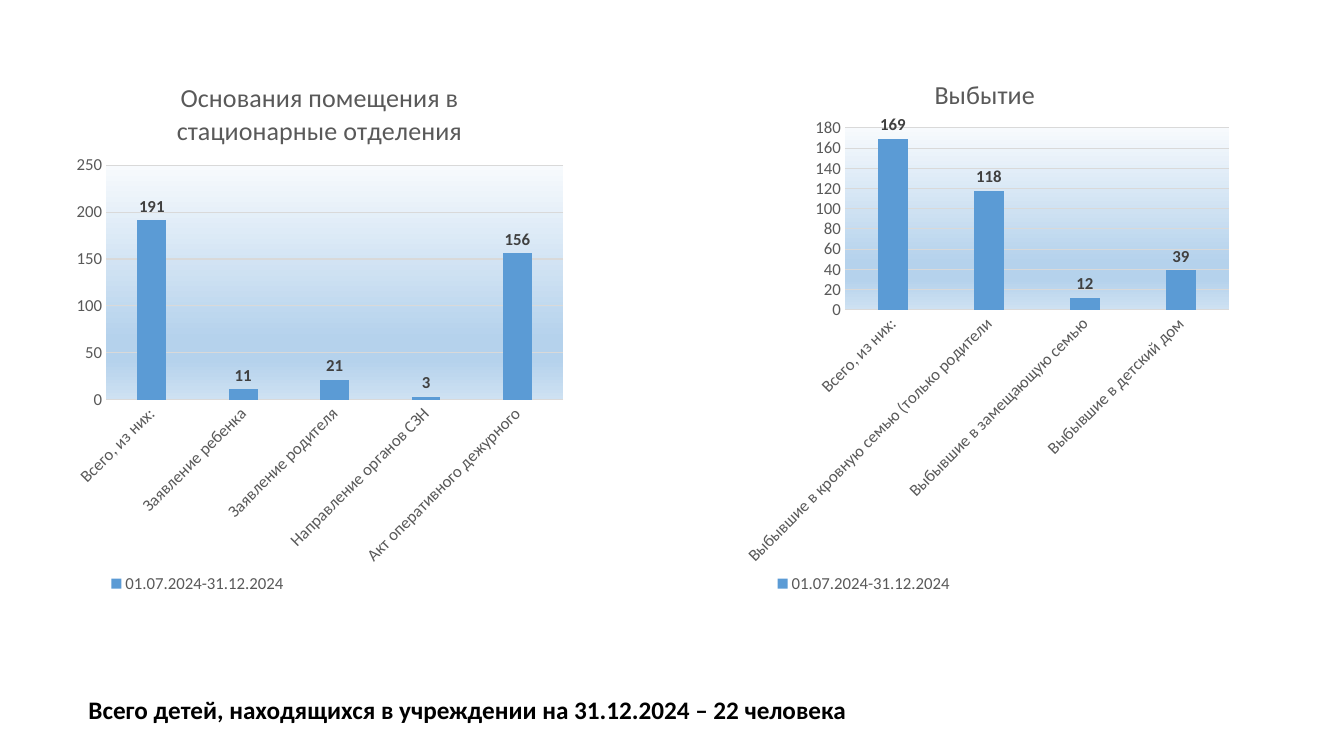
import pptx
import pptx.chart.data
import pptx.dml.color
import pptx.enum.chart
import pptx.enum.text
import pptx.oxml
import pptx.oxml.ns
import pptx.util
from pptx.util import Cm

PERIOD = "01.07.2024-31.12.2024"
SUMMARY = "Всего детей, находящихся в учреждении на 31.12.2024 – 22 человека"
CHARTS = [
    {
        "title": "Основания помещения в стационарные отделения",
        "left": 1.65,
        "values": {
            "Всего, из них:": 191,
            "Заявление ребенка": 11,
            "Заявление родителя": 21,
            "Направление органов СЗН": 3,
            "Акт оперативного дежурного": 156,
        },
        "maximum": 250,
        "step": 50,
        "plot_box": (0.08, 0.21, 0.9, 0.415),
        "title_place": (0.21, 0.05),
    },
    {
        "title": "Выбытие",
        "left": 18.44,
        "values": {
            "Всего, из них:": 169,
            "Выбывшие в кровную семью (только родители": 118,
            "Выбывшие в замещающую семью": 12,
            "Выбывшие в детский дом": 39,
        },
        "maximum": 180,
        "step": 20,
        "plot_box": (0.223, 0.144, 0.756, 0.322),
        "title_place": (0.39, 0.045),
    },
]
LEGEND_BOX = (0.08, 0.93, 0.36, 0.04)
CHART_TOP, CHART_WIDTH, CHART_HEIGHT = 1.17, 12.8, 14.25
THEME = {
    "font": "Calibri",
    "bar": "5B9BD5",
    "axis": "D9D9D9",
    "text": "595959",
    "label": "404040",
    "summary": "000000",
    "plot_stops": [(0, "F7FAFD"), (74, "B5D2EC"), (83, "B5D2EC"), (100, "CEE1F2")],
    "title_size": 18.6,
    "chart_size": 12,
    "summary_size": 18,
}


def color(name):
    return pptx.dml.color.RGBColor.from_string(THEME[name])


def style_font(font, size, color_name, bold=False):
    font.name = THEME["font"]
    font.size = pptx.util.Pt(THEME[size])
    font.color.rgb = color(color_name)
    font.bold = bold


def style_line(line):
    line.color.rgb = color("axis")
    line.width = pptx.util.Pt(0.75)


def set_layout(element, index, box, inner=False):
    for old_layout in element.findall(pptx.oxml.ns.qn("c:layout")):
        element.remove(old_layout)
    target = '<c:layoutTarget val="inner"/>' if inner else ""
    modes = "".join(f'<c:{axis}Mode val="edge"/>' for axis in "xy")
    sizes = "".join(f'<c:{key} val="{value}"/>' for key, value in zip("xywh", box))
    element.insert(index, pptx.oxml.parse_xml(
        f'<c:layout {pptx.oxml.ns.nsdecls("c")}><c:manualLayout>'
        f"{target}{modes}{sizes}</c:manualLayout></c:layout>"))


def fill_plot(plot_area):
    stops = "".join(
        f'<a:gs pos="{position * 1000}"><a:srgbClr val="{value}"/></a:gs>'
        for position, value in THEME["plot_stops"])
    plot_area.append(pptx.oxml.parse_xml(
        f'<c:spPr {pptx.oxml.ns.nsdecls("c", "a")}><a:gradFill><a:gsLst>{stops}</a:gsLst>'
        '<a:lin ang="5400000" scaled="1"/></a:gradFill><a:ln><a:noFill/></a:ln></c:spPr>'))


def style_axes(chart, content):
    for axis in (chart.category_axis, chart.value_axis):
        axis.major_tick_mark = pptx.enum.chart.XL_TICK_MARK.NONE
        axis.minor_tick_mark = pptx.enum.chart.XL_TICK_MARK.NONE
        style_font(axis.tick_labels.font, "chart_size", "text")
    style_line(chart.category_axis.format.line)
    chart.category_axis._element.txPr.bodyPr.set("rot", "-2700000")
    value_axis = chart.value_axis
    value_axis.format.line.fill.background()
    value_axis.minimum_scale = 0
    value_axis.maximum_scale = content["maximum"]
    value_axis.major_unit = content["step"]
    value_axis.has_major_gridlines = True
    style_line(value_axis.major_gridlines.format.line)


def add_column_chart(slide, content):
    data = pptx.chart.data.CategoryChartData()
    data.categories = list(content["values"])
    data.add_series(PERIOD, list(content["values"].values()))
    chart = slide.shapes.add_chart(
        pptx.enum.chart.XL_CHART_TYPE.COLUMN_CLUSTERED,
        Cm(content["left"]), Cm(CHART_TOP), Cm(CHART_WIDTH), Cm(CHART_HEIGHT), data).chart
    style_font(chart.font, "chart_size", "text")

    chart.has_title = True
    title = chart.chart_title
    title.text_frame.text = content["title"]
    style_font(title.text_frame.paragraphs[0].runs[0].font, "title_size", "text")
    title.include_in_layout = False
    set_layout(title._element, 1, content["title_place"])

    chart.has_legend = True
    chart.legend.position = pptx.enum.chart.XL_LEGEND_POSITION.BOTTOM
    chart.legend.include_in_layout = False
    style_font(chart.legend.font, "chart_size", "text")
    set_layout(chart.legend._element, 1, LEGEND_BOX)

    style_axes(chart, content)
    plot = chart.plots[0]
    plot.gap_width = 219
    plot.overlap = -27
    plot.vary_by_categories = False
    series = plot.series[0]
    series.format.fill.solid()
    series.format.fill.fore_color.rgb = color("bar")
    labels = series.data_labels
    labels.show_value = True
    labels.position = pptx.enum.chart.XL_LABEL_POSITION.OUTSIDE_END
    style_font(labels.font, "chart_size", "label", bold=True)

    plot_area = chart._chartSpace.chart.plotArea
    set_layout(plot_area, 0, content["plot_box"], inner=True)
    fill_plot(plot_area)


def add_summary(slide):
    box = slide.shapes.add_textbox(Cm(1.98), Cm(17.37), Cm(30.8), Cm(1.03))
    text_frame = box.text_frame
    text_frame.word_wrap = True
    text_frame.auto_size = pptx.enum.text.MSO_AUTO_SIZE.SHAPE_TO_FIT_TEXT
    text_frame.text = SUMMARY
    style_font(text_frame.paragraphs[0].runs[0].font, "summary_size", "summary", bold=True)


def main():
    presentation = pptx.Presentation()
    presentation.slide_width = Cm(33.87)
    presentation.slide_height = Cm(19.05)
    slide = presentation.slides.add_slide(presentation.slide_layouts[6])
    for content in CHARTS:
        add_column_chart(slide, content)
    add_summary(slide)
    presentation.save("out.pptx")


if __name__ == "__main__":
    main()
